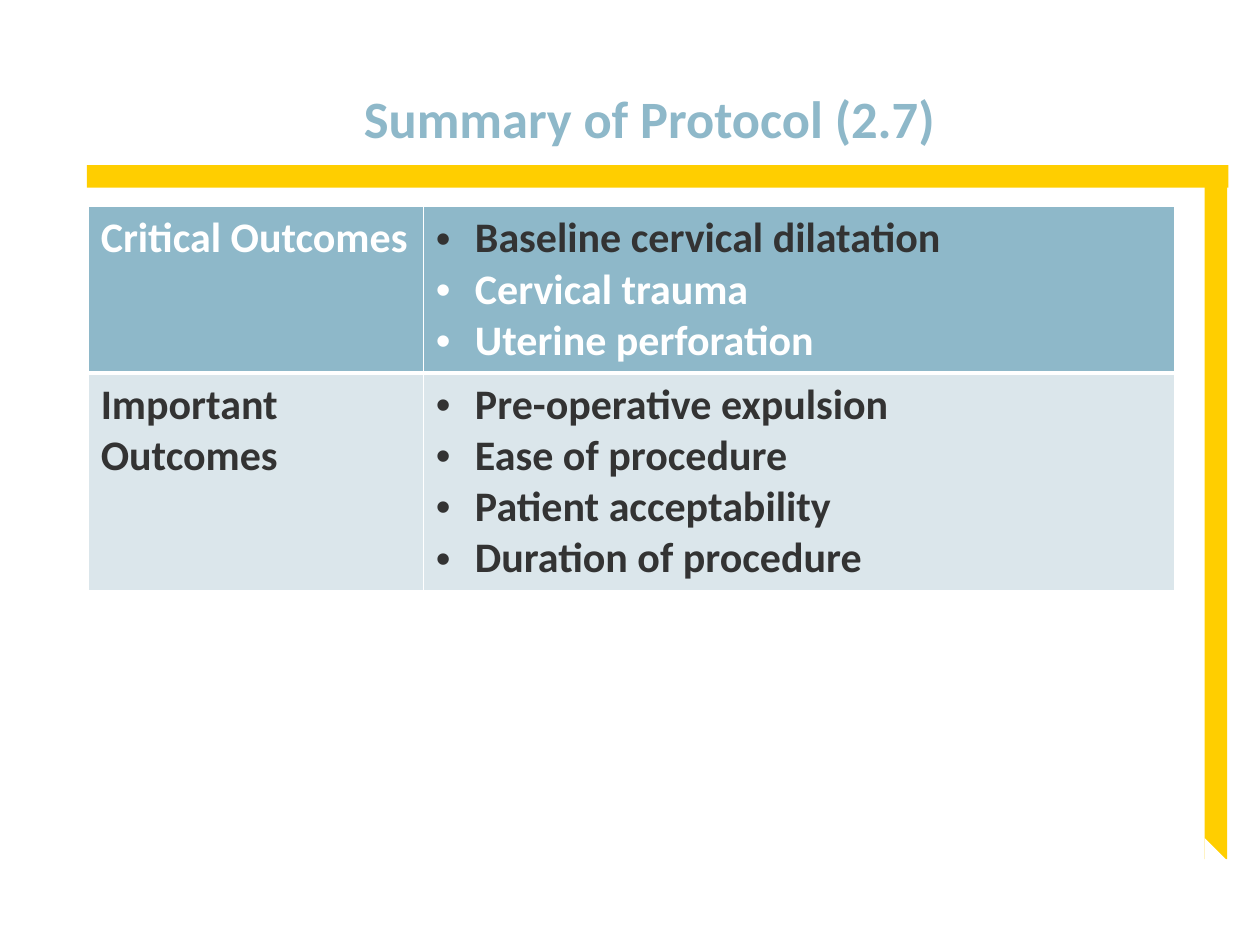
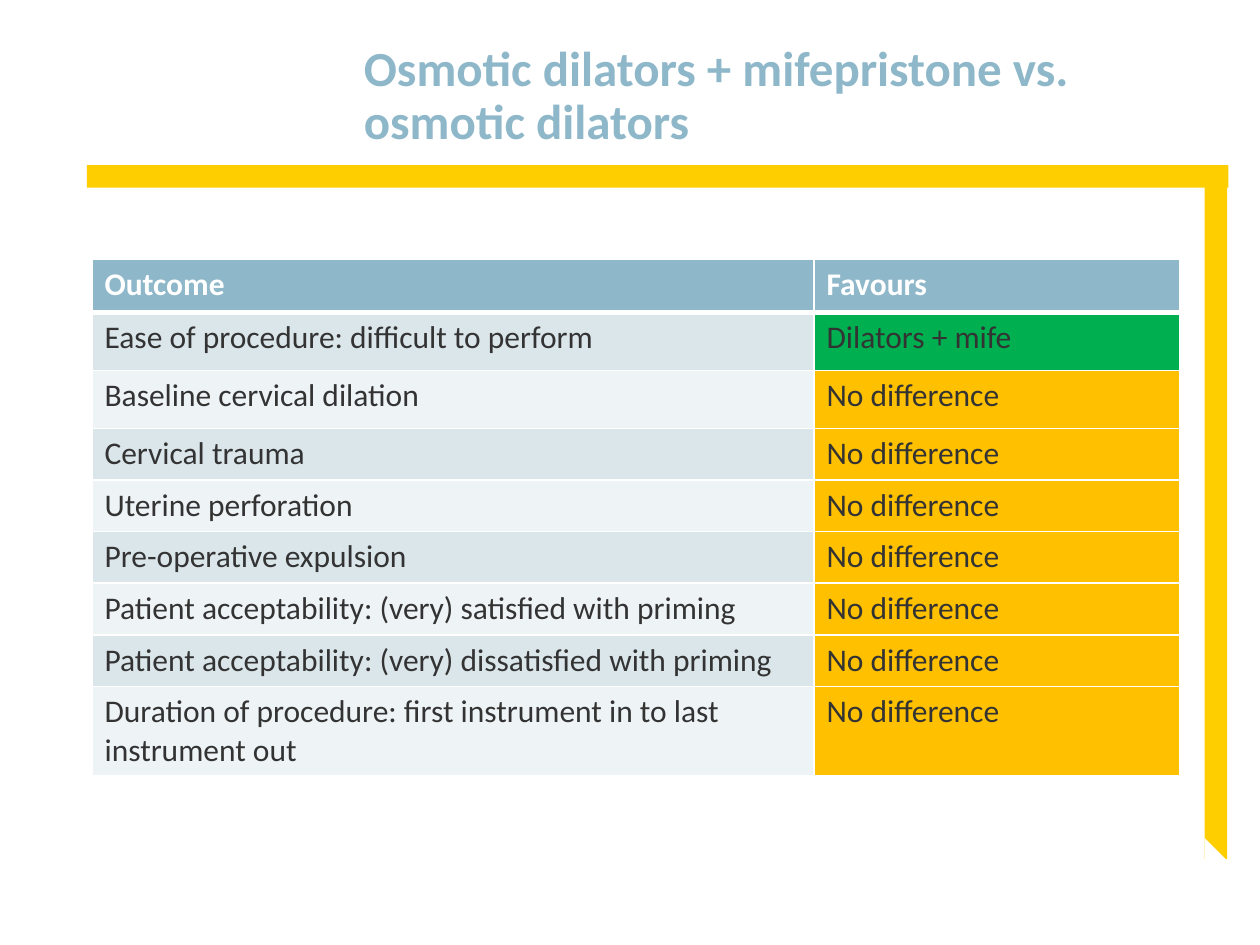
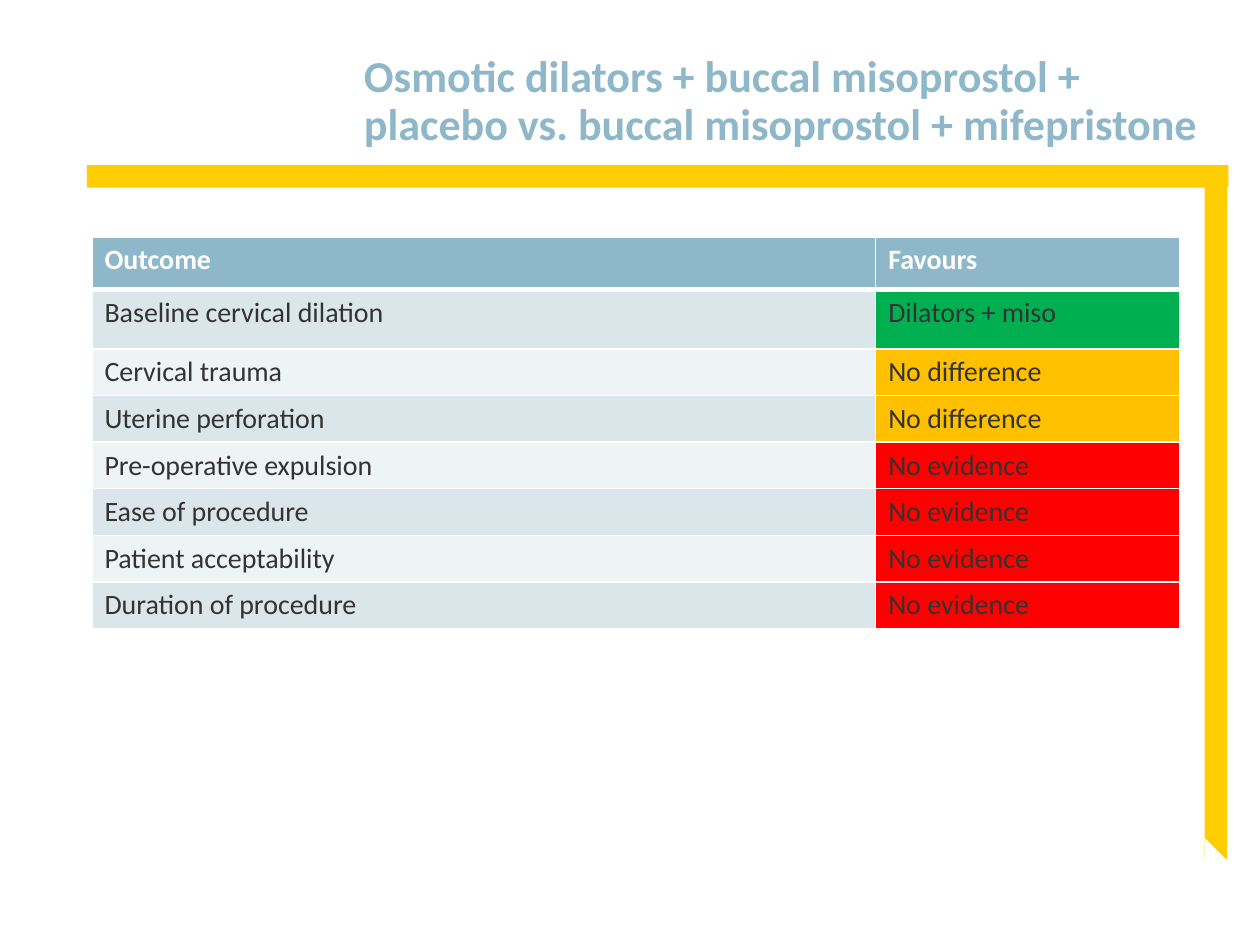
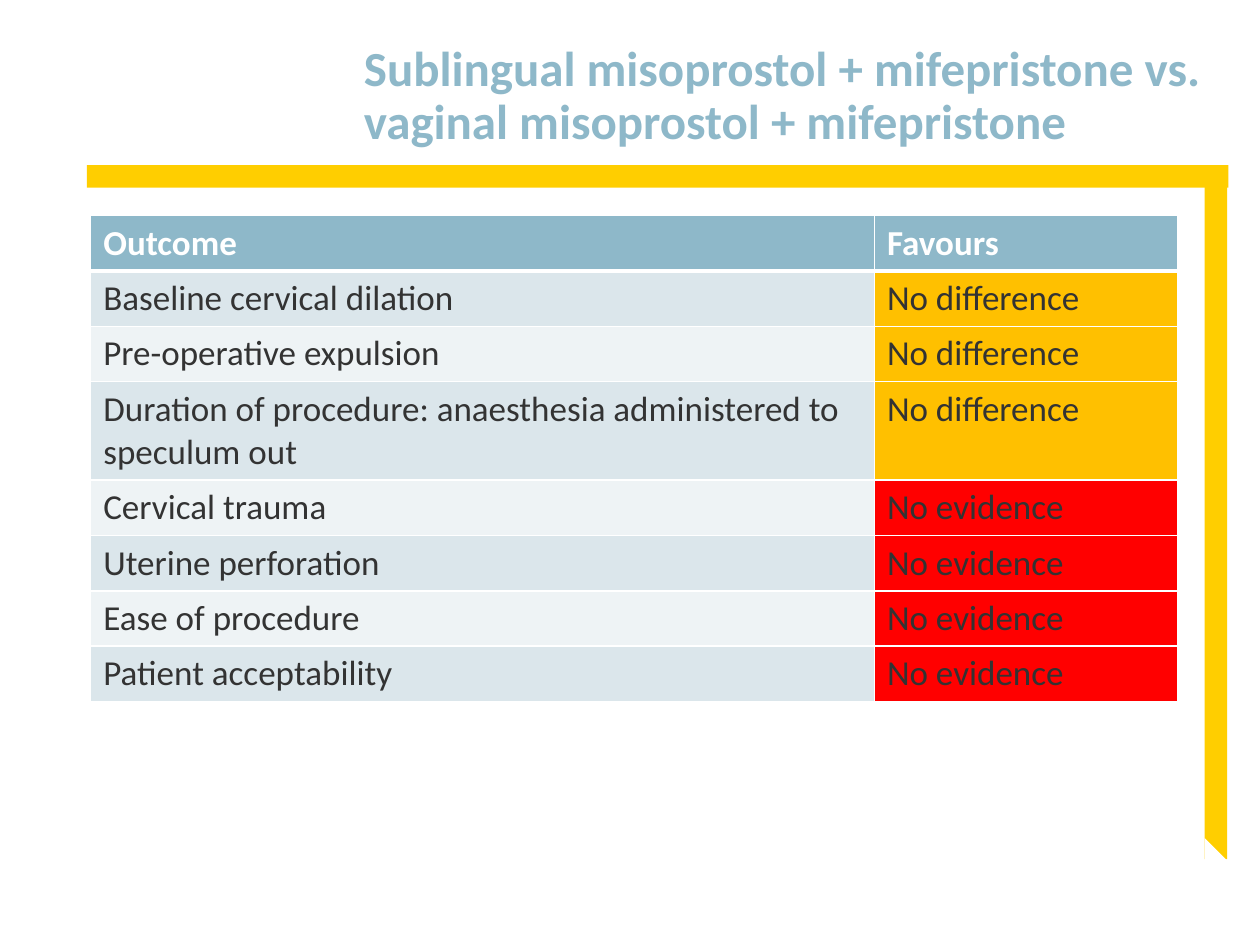
from dataclasses import dataclass

from lxml import etree
from pptx import Presentation
from pptx.dml.color import RGBColor
from pptx.enum.shapes import MSO_SHAPE
from pptx.enum.text import MSO_ANCHOR
from pptx.oxml.ns import qn
from pptx.util import Inches, Pt

RECTANGLE = MSO_SHAPE.RECTANGLE
TRIANGLE = MSO_SHAPE.ISOSCELES_TRIANGLE
ANCHOR_BOTTOM = MSO_ANCHOR.BOTTOM
BLANK_LAYOUT = 6


# Theme
@dataclass(frozen=True)
class Theme:
    font: str = "Calibri"
    white: str = "FFFFFF"
    text: str = "333333"
    accent: str = "8EB8C9"
    frame: str = "FFCE00"
    bands: tuple[str, str] = ("DBE6EB", "EEF3F5")
    favourable: str = "00B050"
    no_difference: str = "FFC000"
    no_evidence: str = "FF0000"
    title_size: float = 28
    title_large: float = 30
    title_small: float = 25.2
    protocol_size: float = 24
    line_height: float = 1.22
    thin_border: float = 1
    header_border: float = 3


THEME = Theme()
FINDING_FILLS = {
    "No difference": THEME.no_difference,
    "No evidence": THEME.no_evidence,
}


# Content types
@dataclass(frozen=True)
class Line:
    text: str
    color: str = THEME.text
    bold: bool = False
    bulleted: bool = False


@dataclass(frozen=True)
class Cell:
    lines: list[Line]
    fill: str


@dataclass(frozen=True)
class Row:
    cells: list[Cell]
    height: float


@dataclass(frozen=True)
class Outcome:
    name: str
    finding: str = "No difference"
    text_lines: int = 1
    minimum_height: float = 0


@dataclass(frozen=True)
class TableSpot:
    left: float
    top: float
    columns: tuple[float, float]
    text_size: float


@dataclass(frozen=True)
class Comparison:
    title: str
    title_size: float
    spot: TableSpot
    header_height: float
    outcomes: list[Outcome]


# Drawing helpers
def add_block(shapes, kind, left: float, top: float, width: float, height: float, color: str):
    shape = shapes.add_shape(kind, Inches(left), Inches(top), Inches(width), Inches(height))
    shape.shadow.inherit = False
    shape.fill.solid()
    shape.fill.fore_color.rgb = RGBColor.from_string(color)
    shape.line.fill.background()
    return shape


def add_run(paragraph, text: str, size: float, color: str, bold: bool) -> None:
    font_format = {"name": THEME.font, "size": Pt(size), "bold": bold}
    run = paragraph.add_run()
    run.text = text
    for attribute, value in font_format.items():
        setattr(run.font, attribute, value)
    run.font.color.rgb = RGBColor.from_string(color)


def set_indent(paragraph, left: float, first: float = 0):
    properties = paragraph._p.get_or_add_pPr()
    properties.set("marL", str(Inches(left)))
    properties.set("indent", str(Inches(first)))
    return properties


def set_borders(cell, bottom_width: float) -> None:
    properties = cell._tc.get_or_add_tcPr()
    widths = dict.fromkeys(("lnL", "lnR", "lnT"), THEME.thin_border) | {"lnB": bottom_width}
    for side, width in widths.items():
        line = etree.SubElement(properties, qn(f"a:{side}"), w=str(Pt(width)))
        fill = etree.SubElement(line, qn("a:solidFill"))
        etree.SubElement(fill, qn("a:srgbClr"), val=THEME.white)


def text_height(lines: int, size: float) -> float:
    return round(lines * size * THEME.line_height / 72 + 0.1, 2)


def add_frame(slide) -> None:
    add_block(slide.shapes, RECTANGLE, 0.69, 1.31, 9.06, 0.18, THEME.frame)
    side = slide.shapes.add_group_shape()
    add_block(side.shapes, RECTANGLE, 9.56, 1.31, 0.18, 5.51, THEME.frame)
    corner = add_block(side.shapes, TRIANGLE, 9.56, 6.65, 0.18, 0.18, THEME.white)
    corner.adjustments[0] = 0


def add_title(slide, title: str, size: float) -> None:
    box = slide.shapes.add_textbox(Inches(2.53), Inches(0.2), Inches(7.19), Inches(1.04))
    frame = box.text_frame
    frame.word_wrap = True
    frame.vertical_anchor = ANCHOR_BOTTOM
    paragraph = frame.paragraphs[0]
    set_indent(paragraph, 0.26)
    paragraph.line_spacing = 0.9
    add_run(paragraph, title, size, THEME.accent, True)


def fill_cell(cell, content: Cell, size: float, bottom_width: float) -> None:
    set_borders(cell, bottom_width)
    cell.fill.solid()
    cell.fill.fore_color.rgb = RGBColor.from_string(content.fill)
    frame = cell.text_frame
    for index, line in enumerate(content.lines):
        paragraph = frame.add_paragraph() if index else frame.paragraphs[0]
        if line.bulleted:
            properties = set_indent(paragraph, 0.31, -0.31)
            etree.SubElement(properties, qn("a:buFont"), typeface="Arial")
            etree.SubElement(properties, qn("a:buChar"), char="•")
        add_run(paragraph, line.text, size, line.color, line.bold)


def add_outcome_table(slide, spot: TableSpot, rows: list[Row]) -> None:
    table = slide.shapes.add_table(
        len(rows), len(spot.columns), Inches(spot.left), Inches(spot.top),
        Inches(sum(spot.columns)), Inches(sum(row.height for row in rows)),
    ).table
    for column, width in zip(table.columns, spot.columns):
        column.width = Inches(width)
    for row_index, row in enumerate(rows):
        table.rows[row_index].height = Inches(row.height)
        bottom_width = THEME.thin_border if row_index else THEME.header_border
        for column_index, content in enumerate(row.cells):
            fill_cell(table.cell(row_index, column_index), content, spot.text_size, bottom_width)


def start_slide(presentation, title: str, title_size: float):
    slide = presentation.slides.add_slide(presentation.slide_layouts[BLANK_LAYOUT])
    add_frame(slide)
    add_title(slide, title, title_size)
    return slide


# Protocol summary
def protocol_row(label: str, label_color: str, fill: str, items: dict[str, str]) -> Row:
    bullets = [Line(text, color, True, True) for text, color in items.items()]
    cells = [Cell([Line(label, label_color, True)], fill), Cell(bullets, fill)]
    return Row(cells, text_height(len(bullets), THEME.protocol_size))


def add_protocol_slide(presentation) -> None:
    slide = start_slide(presentation, "Summary of Protocol (2.7)", THEME.title_large)
    critical = {
        "Baseline cervical dilatation": THEME.text,
        "Cervical trauma": THEME.white,
        "Uterine perforation": THEME.white,
    }
    important = dict.fromkeys(
        ("Pre-operative expulsion", "Ease of procedure",
         "Patient acceptability", "Duration of procedure"),
        THEME.text,
    )
    rows = [
        protocol_row("Critical Outcomes", THEME.white, THEME.accent, critical),
        protocol_row("Important Outcomes", THEME.text, THEME.bands[0], important),
    ]
    spot = TableSpot(0.7, 1.64, (2.66, 5.96), THEME.protocol_size)
    add_outcome_table(slide, spot, rows)


# Comparisons
COMPARISONS = [
    Comparison(
        "Osmotic dilators + mifepristone vs. osmotic dilators",
        THEME.title_size, TableSpot(0.73, 2.06, (5.73, 2.9), 18), 0.42,
        [
            Outcome("Ease of procedure: difficult to perform", "Dilators + mife",
                    minimum_height=0.46),
            Outcome("Baseline cervical dilation", minimum_height=0.46),
            Outcome("Cervical trauma"),
            Outcome("Uterine perforation"),
            Outcome("Pre-operative expulsion"),
            Outcome("Patient acceptability: (very) satisfied with priming"),
            Outcome("Patient acceptability: (very) dissatisfied with priming"),
            Outcome("Duration of procedure: first instrument in to last instrument out",
                    text_lines=2),
        ],
    ),
    Comparison(
        "Osmotic dilators + buccal misoprostol + placebo vs. buccal misoprostol + mifepristone",
        THEME.title_small, TableSpot(0.73, 1.88, (6.22, 2.41), 16), 0.42,
        [
            Outcome("Baseline cervical dilation", "Dilators + miso", minimum_height=0.47),
            Outcome("Cervical trauma"),
            Outcome("Uterine perforation"),
            Outcome("Pre-operative expulsion", "No evidence"),
            Outcome("Ease of procedure", "No evidence"),
            Outcome("Patient acceptability", "No evidence"),
            Outcome("Duration of procedure", "No evidence"),
        ],
    ),
    Comparison(
        "Sublingual misoprostol + mifepristone vs. vaginal misoprostol + mifepristone",
        THEME.title_size, TableSpot(0.72, 1.71, (6.22, 2.41), 20), 0.44,
        [
            Outcome("Baseline cervical dilation"),
            Outcome("Pre-operative expulsion"),
            Outcome("Duration of procedure: anaesthesia administered to speculum out",
                    text_lines=2),
            Outcome("Cervical trauma", "No evidence"),
            Outcome("Uterine perforation", "No evidence"),
            Outcome("Ease of procedure", "No evidence"),
            Outcome("Patient acceptability", "No evidence"),
        ],
    ),
]


def add_comparison_slide(presentation, comparison: Comparison) -> None:
    slide = start_slide(presentation, comparison.title, comparison.title_size)
    header = [Cell([Line(label, THEME.white, True)], THEME.accent)
              for label in ("Outcome", "Favours")]
    rows = [Row(header, comparison.header_height)]
    for index, outcome in enumerate(comparison.outcomes):
        finding_fill = FINDING_FILLS.get(outcome.finding, THEME.favourable)
        cells = [
            Cell([Line(outcome.name)], THEME.bands[index % 2]),
            Cell([Line(outcome.finding)], finding_fill),
        ]
        natural_height = text_height(outcome.text_lines, comparison.spot.text_size)
        rows.append(Row(cells, max(natural_height, outcome.minimum_height)))
    add_outcome_table(slide, comparison.spot, rows)


def main() -> None:
    presentation = Presentation()
    presentation.slide_width = Inches(10)
    presentation.slide_height = Inches(7.5)
    add_protocol_slide(presentation)
    for comparison in COMPARISONS:
        add_comparison_slide(presentation, comparison)
    presentation.save("out.pptx")


if __name__ == "__main__":
    main()
